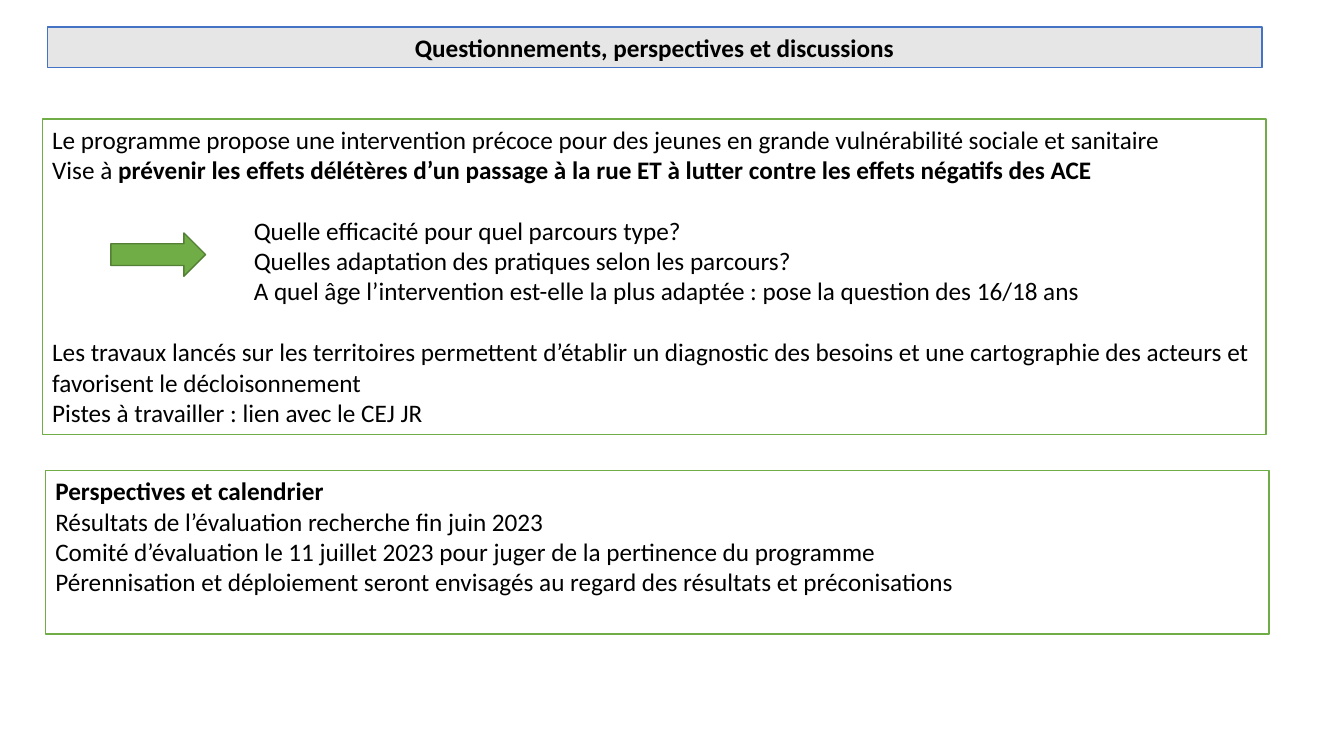
from pptx import Presentation
from pptx.dml.color import RGBColor
from pptx.enum.shapes import MSO_SHAPE
from pptx.enum.text import MSO_ANCHOR, PP_ALIGN
from pptx.util import Pt

RECT, ARROW = MSO_SHAPE.RECTANGLE, MSO_SHAPE.RIGHT_ARROW
TOP, LEFT, CENTER = MSO_ANCHOR.TOP, PP_ALIGN.LEFT, PP_ALIGN.CENTER

THEME = {
    "font": "Calibri", "size": 18, "gap": 22, "indent": 144, "line": 1,
    "text": "000000", "white": "FFFFFF", "gray": "E7E6E6",
    "blue": "4472C4", "green": "70AD47", "dark": "538035",
}

PLAIN, BOLD = False, True
GOALS = [
    [("Le programme propose une intervention précoce pour des jeunes en grande "
      "vulnérabilité sociale et sanitaire", PLAIN)],
    [("Vise à ", PLAIN),
     ("prévenir les effets délétères d’un passage à la rue ET à lutter contre "
      "les effets négatifs des ACE", BOLD)],
]
ASKS = [
    [("Quelle efficacité pour quel parcours type?", PLAIN)],
    [("Quelles adaptation des pratiques selon les parcours?", PLAIN)],
    [("A quel âge l’intervention est-elle la plus adaptée : pose la question "
      "des 16/18 ans", PLAIN)],
]
WORKS = [
    [("Les travaux lancés sur les territoires permettent d’établir un diagnostic "
      "des besoins et une cartographie des acteurs et favorisent le "
      "décloisonnement", PLAIN)],
    [("Pistes à travailler : lien avec le CEJ JR", PLAIN)],
]
DATES = [
    [("Perspectives et calendrier", BOLD)],
    [("Résultats de l’évaluation recherche fin juin 2023", PLAIN)],
    [("Comité d’évaluation le 11 juillet 2023 pour juger de la pertinence du "
      "programme", PLAIN)],
    [("Pérennisation et déploiement seront envisagés au regard des résultats et "
      "préconisations", PLAIN)],
]
TITLE = [[("Questionnements, perspectives et discussions", BOLD)]]

PANELS = [
    ((30.2, 85, 874, 225.4), "white", "green", LEFT,
     [(GOALS, 0), (ASKS, THEME["indent"]), (WORKS, 0)]),
    ((32.4, 336.2, 874, 116.6), "white", "green", LEFT, [(DATES, 0)]),
    ((33.8, 19.4, 867.6, 29), "gray", "blue", CENTER, [(TITLE, 0)]),
]
POINTER = (79.2, 166.4, 67.7, 31)


def color(name):
    return RGBColor.from_string(THEME[name])


def add_form(slide, kind, box, fill, line):
    form = slide.shapes.add_shape(kind, *map(Pt, box))
    form.shadow.inherit = False
    form.fill.solid()
    form.fill.fore_color.rgb = color(fill)
    form.line.color.rgb = color(line)
    form.line.width = Pt(THEME["line"])
    return form


def add_runs(para, parts):
    for text, bold in parts:
        run = para.add_run()
        run.text = text
        run.font.name = THEME["font"]
        run.font.size = Pt(THEME["size"])
        run.font.bold = bold
        run.font.color.rgb = color("text")


def add_panel(slide, box, fill, line, align, groups):
    frame = add_form(slide, RECT, box, fill, line).text_frame
    frame.word_wrap = True
    frame.vertical_anchor = TOP
    para = frame.paragraphs[0]
    for part, (lines, indent) in enumerate(groups):
        for row, parts in enumerate(lines):
            if part or row:
                para = frame.add_paragraph()
            para.alignment = align
            if part and not row:
                para.space_before = Pt(THEME["gap"])
            if indent:
                para._p.get_or_add_pPr().set("marL", str(Pt(indent)))
            add_runs(para, parts)


def main():
    deck = Presentation()
    deck.slide_width, deck.slide_height = Pt(960), Pt(540)
    slide = deck.slides.add_slide(deck.slide_layouts[6])
    for panel in PANELS:
        add_panel(slide, *panel)
    add_form(slide, ARROW, POINTER, "green", "dark")
    deck.save("out.pptx")


if __name__ == "__main__":
    main()
